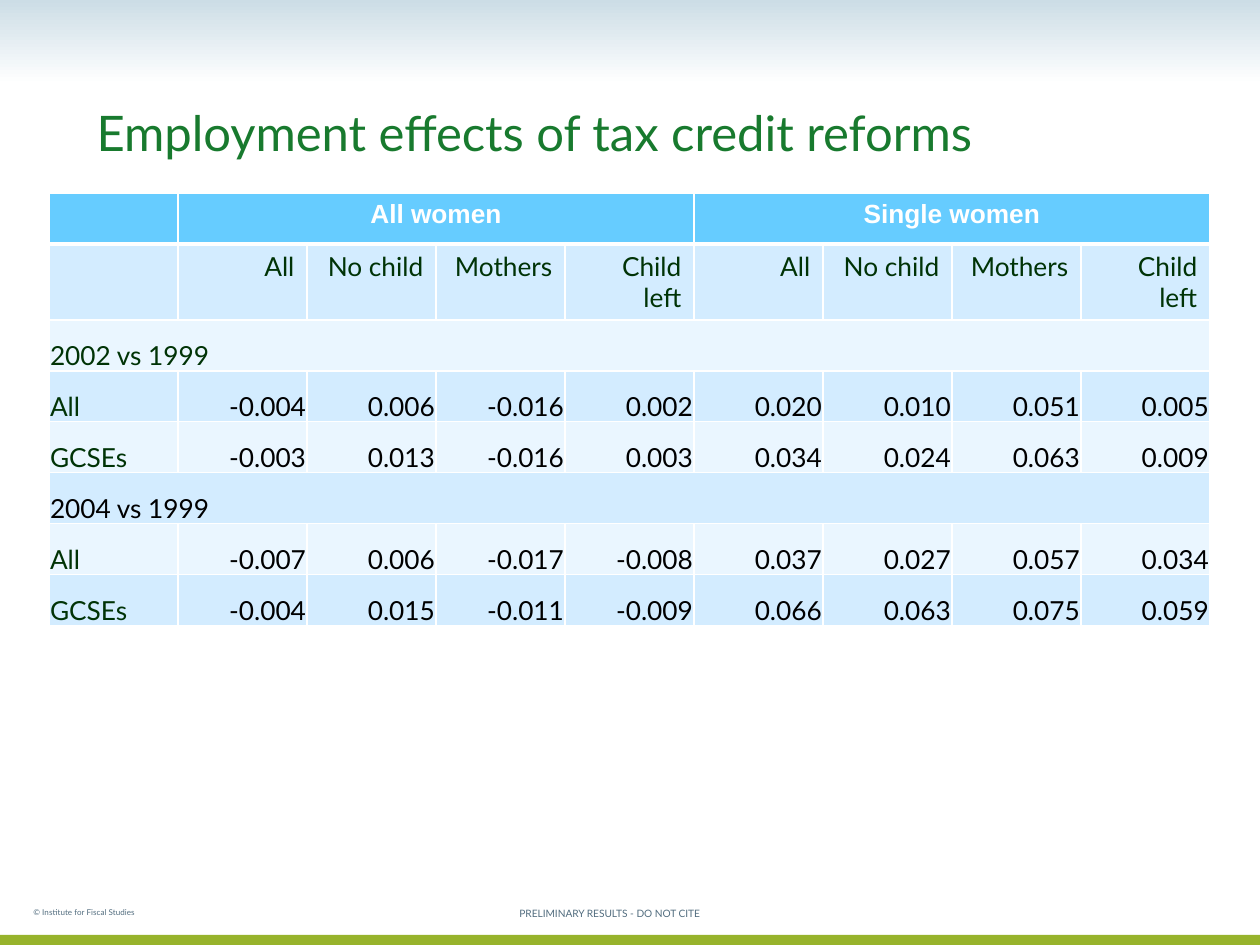
"""Build a slide with a table of employment effects of tax credit reforms."""
from lxml.etree import SubElement
from pptx import Presentation
from pptx.dml.color import RGBColor
from pptx.enum.shapes import MSO_SHAPE
from pptx.enum.text import MSO_ANCHOR, MSO_AUTO_SIZE, PP_ALIGN
from pptx.oxml.ns import qn
from pptx.util import Emu, Pt

COLORS = {
    "sky": "CCDDE6", "white": "FFFFFF", "lime": "97B32C", "title": "187A2E",
    "header": "66CCFF", "dark_band": "D3ECFF", "light_band": "EAF6FF",
    "label": "003306", "value": "000000", "footer": "526D7F",
}
TITLE = "Employment effects of tax credit reforms"
COPYRIGHT = "© Institute for Fiscal Studies"
NOTICE = "PRELIMINARY RESULTS - DO NOT CITE"
GROUPS = ["All women", "Single women"]
SUBGROUPS = ["All", "No child", "Mothers", "Child left"]
SECTIONS = [
    ("2002 vs 1999", "label", [
        ("All", "-0.004 0.006 -0.016 0.002 0.020 0.010 0.051 0.005"),
        ("GCSEs", "-0.003 0.013 -0.016 0.003 0.034 0.024 0.063 0.009"),
    ]),
    ("2004 vs 1999", "value", [
        ("All", "-0.007 0.006 -0.017 -0.008 0.037 0.027 0.057 0.034"),
        ("GCSEs", "-0.004 0.015 -0.011 -0.009 0.066 0.063 0.075 0.059"),
    ]),
]
SLIDE_W, SLIDE_H = 1260, 945
TABLE_LEFT, TABLE_TOP, COL_W, ROW_H = 49, 193, 129, 51
COLS = 1 + len(GROUPS) * len(SUBGROUPS)
ROWS = 2 + sum(1 + len(rows) for _, _, rows in SECTIONS)


def px(length):
    return Emu(round(length * 914400 / 126))


def rgb(name):
    return RGBColor.from_string(COLORS[name])


def write(frame, text, size=15, font="Lato", color="label", bold=False,
          align=PP_ALIGN.LEFT, anchor=MSO_ANCHOR.TOP, baseline=0):
    frame.word_wrap = True
    frame.vertical_anchor = anchor
    paragraph = frame.paragraphs[0]
    paragraph.alignment = align
    run = paragraph.add_run()
    run.text = text
    run.font.size, run.font.name, run.font.bold = Pt(size), font, bold
    run.font.color.rgb = rgb(color)
    if baseline:
        run._r.get_or_add_rPr().set("baseline", str(baseline * 1000))
    return paragraph


def add_band(slide, top, height):
    band = slide.shapes.add_shape(MSO_SHAPE.RECTANGLE, 0, px(top), px(SLIDE_W), px(height))
    band.shadow.inherit = False
    band.line.fill.background()
    return band.fill


def add_footer(slide, box, text, **style):
    footer = slide.shapes.add_textbox(*map(px, box))
    write(footer.text_frame, text, color="footer", baseline=-25, **style)


def style_cell(cell, fill, top=1, bottom=1):
    properties = cell._tc.get_or_add_tcPr()
    for side, width in (("L", 1), ("R", 1), ("T", top), ("B", bottom)):
        border = SubElement(properties, qn(f"a:ln{side}"), w=str(Pt(width)))
        SubElement(SubElement(border, qn("a:solidFill")), qn("a:srgbClr"), val=COLORS["white"])
    cell.fill.solid()
    cell.fill.fore_color.rgb = rgb(fill)


def write_body(cell, text, **style):
    cell.margin_left = cell.margin_right = cell.margin_top = px(1)
    cell.margin_bottom = 0
    write(cell.text_frame, text, **style)
    cell.vertical_anchor = MSO_ANCHOR.BOTTOM


def add_effects(slide):
    effects = slide.shapes.add_table(
        ROWS, COLS, px(TABLE_LEFT), px(TABLE_TOP), px(COLS * COL_W), px(ROWS * ROW_H)).table
    for column in effects.columns:
        column.width = px(COL_W)
    for r, row in enumerate(effects.rows):
        row.height = px(ROW_H)
        fill = "header" if r == 0 else ("light_band", "dark_band")[r % 2]
        for cell in row.cells:
            style_cell(cell, fill, top=3 if r == 1 else 1, bottom=3 if r == 0 else 1)

    for g, group in enumerate(GROUPS):
        first = 1 + g * len(SUBGROUPS)
        heading = effects.cell(0, first)
        heading.merge(effects.cell(0, first + len(SUBGROUPS) - 1))
        write(heading.text_frame, group, font="Arial", color="white", bold=True,
              align=PP_ALIGN.CENTER)
        for c, subgroup in enumerate(SUBGROUPS, first):
            write(effects.cell(1, c).text_frame, subgroup, align=PP_ALIGN.RIGHT)

    r = 2
    for period, color, rows in SECTIONS:
        effects.cell(r, 0).merge(effects.cell(r, COLS - 1))
        write_body(effects.cell(r, 0), period, color=color)
        for r, (label, values) in enumerate(rows, r + 1):
            write_body(effects.cell(r, 0), label)
            for c, value in enumerate(values.split(), 1):
                write_body(effects.cell(r, c), value, color="value", align=PP_ALIGN.RIGHT)
        r += 1


def main():
    deck = Presentation()
    deck.slide_width, deck.slide_height = px(SLIDE_W), px(SLIDE_H)
    slide = deck.slides.add_slide(deck.slide_layouts[5])

    sky = add_band(slide, 0, 84)
    sky.gradient()
    sky.gradient_angle = 270
    for stop, color in zip(sky.gradient_stops, ("sky", "white")):
        stop.color.rgb = rgb(color)
    for stop, position in zip(sky.gradient_stops, (0, 1)):
        stop.position = position
    ground = add_band(slide, 935, 10)
    ground.solid()
    ground.fore_color.rgb = rgb("lime")

    add_effects(slide)
    title = slide.shapes.title
    title.left, title.top, title.width, title.height = map(px, (84, 32, 1081, 136))
    title.text_frame.auto_size = MSO_AUTO_SIZE.NONE
    write(title.text_frame, TITLE, size=28, color="title",
          anchor=MSO_ANCHOR.BOTTOM).line_spacing = 0.9
    add_footer(slide, (21, 892, 347, 32), COPYRIGHT, size=8)
    add_footer(slide, (410, 892, 399, 32), NOTICE, size=10,
               align=PP_ALIGN.CENTER, anchor=MSO_ANCHOR.MIDDLE)
    deck.save("out.pptx")


if __name__ == "__main__":
    main()
